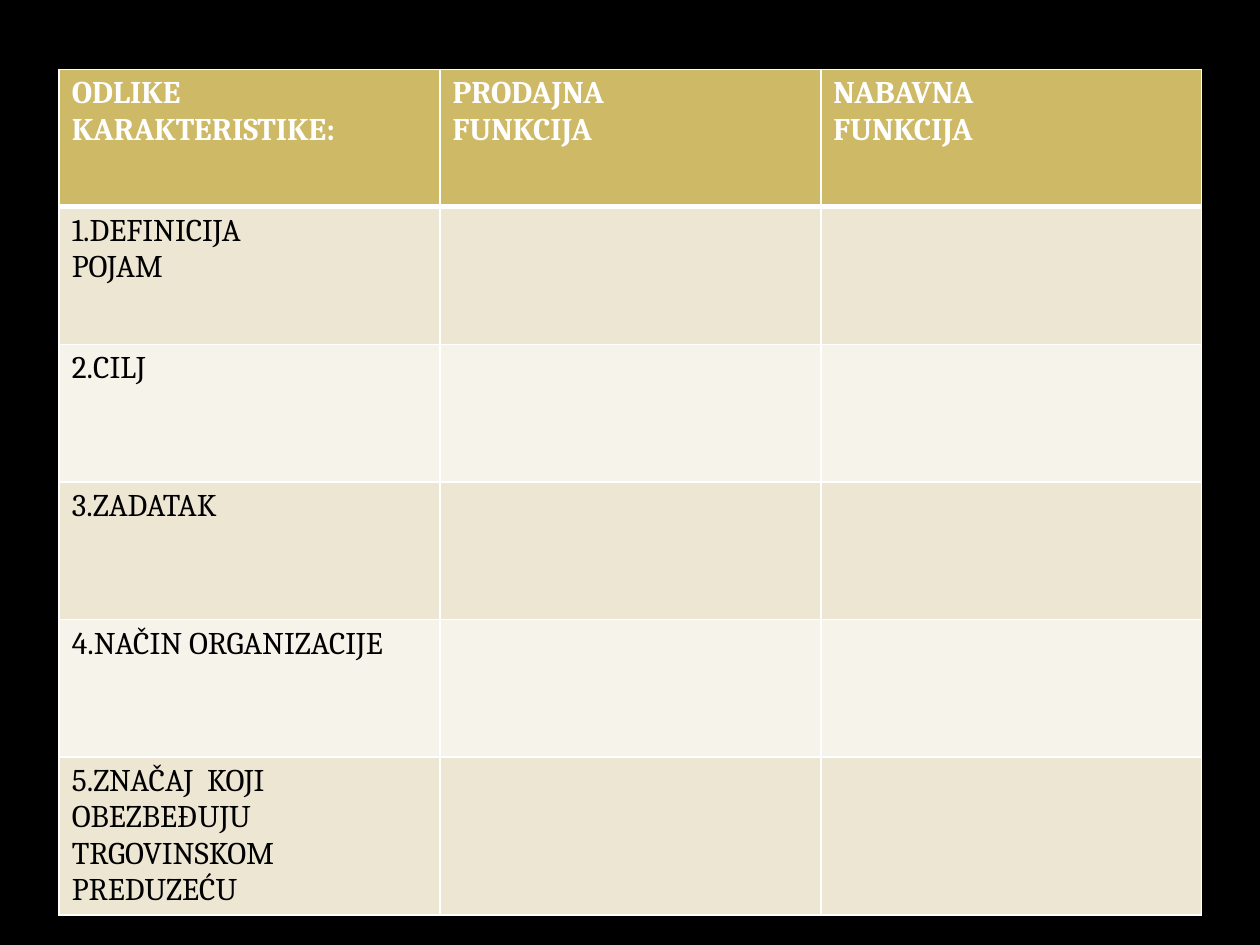
from lxml import etree
from pptx import Presentation
from pptx.dml.color import RGBColor
from pptx.oxml.ns import qn
from pptx.util import Pt

WHITE = RGBColor(0xFF, 0xFF, 0xFF)
BLACK = RGBColor(0x00, 0x00, 0x00)
GOLD = RGBColor(0xCE, 0xB9, 0x66)
SAND = RGBColor(0xED, 0xE6, 0xD3)
CREAM = RGBColor(0xF6, 0xF3, 0xEA)

FONT = "Cambria"
FONT_SIZE = 18
TABLE_LEFT, TABLE_TOP = 33.84, 39.6
COLUMN_WIDTH, ROW_HEIGHT = 217.6, 78.6
BORDER, HEADER_RULE = 1, 3

HEADINGS = [
    ["ODLIKE", "KARAKTERISTIKE:"],
    ["PRODAJNA", "FUNKCIJA"],
    ["NABAVNA", "FUNKCIJA"],
]
CHARACTERISTICS = [
    ["1.DEFINICIJA", "POJAM"],
    ["2.CILJ"],
    ["3.ZADATAK"],
    ["4.NAČIN ORGANIZACIJE"],
    ["5.ZNAČAJ  KOJI OBEZBEĐUJU  TRGOVINSKOM PREDUZEĆU"],
]


def write_lines(cell, lines, color, bold):
    frame = cell.text_frame
    for index, line in enumerate(lines):
        paragraph = frame.add_paragraph() if index else frame.paragraphs[0]
        run = paragraph.add_run()
        run.text = line
        run.font.name = FONT
        run.font.size = Pt(FONT_SIZE)
        run.font.bold = bold
        run.font.color.rgb = color


def draw_borders(cell, top, bottom):
    properties = cell._tc.get_or_add_tcPr()
    sides = [("a:lnL", BORDER), ("a:lnR", BORDER), ("a:lnT", top), ("a:lnB", bottom)]
    for position, (side, width) in enumerate(sides):
        line = etree.Element(qn(side), w=str(Pt(width)))
        fill = etree.SubElement(line, qn("a:solidFill"))
        etree.SubElement(fill, qn("a:srgbClr"), val=str(WHITE))
        properties.insert(position, line)


def main():
    presentation = Presentation()
    presentation.slide_width, presentation.slide_height = Pt(720), Pt(540)
    slide = presentation.slides.add_slide(presentation.slide_layouts[6])
    slide.background.fill.solid()
    slide.background.fill.fore_color.rgb = BLACK

    column_count = len(HEADINGS)
    rows = [HEADINGS] + [[label] + [[]] * (column_count - 1) for label in CHARACTERISTICS]
    comparison = slide.shapes.add_table(
        len(rows), column_count, Pt(TABLE_LEFT), Pt(TABLE_TOP),
        Pt(COLUMN_WIDTH * column_count), Pt(ROW_HEIGHT * len(rows)),
    ).table
    for column in comparison.columns:
        column.width = Pt(COLUMN_WIDTH)

    for row_index, row in enumerate(rows):
        comparison.rows[row_index].height = Pt(ROW_HEIGHT)
        is_header = row_index == 0
        background = GOLD if is_header else SAND if row_index % 2 else CREAM
        for column_index, lines in enumerate(row):
            cell = comparison.cell(row_index, column_index)
            cell.fill.solid()
            cell.fill.fore_color.rgb = background
            write_lines(cell, lines, WHITE if is_header else BLACK, is_header)
            draw_borders(
                cell,
                HEADER_RULE if row_index == 1 else BORDER,
                HEADER_RULE if is_header else BORDER,
            )

    presentation.save("out.pptx")


if __name__ == "__main__":
    main()
